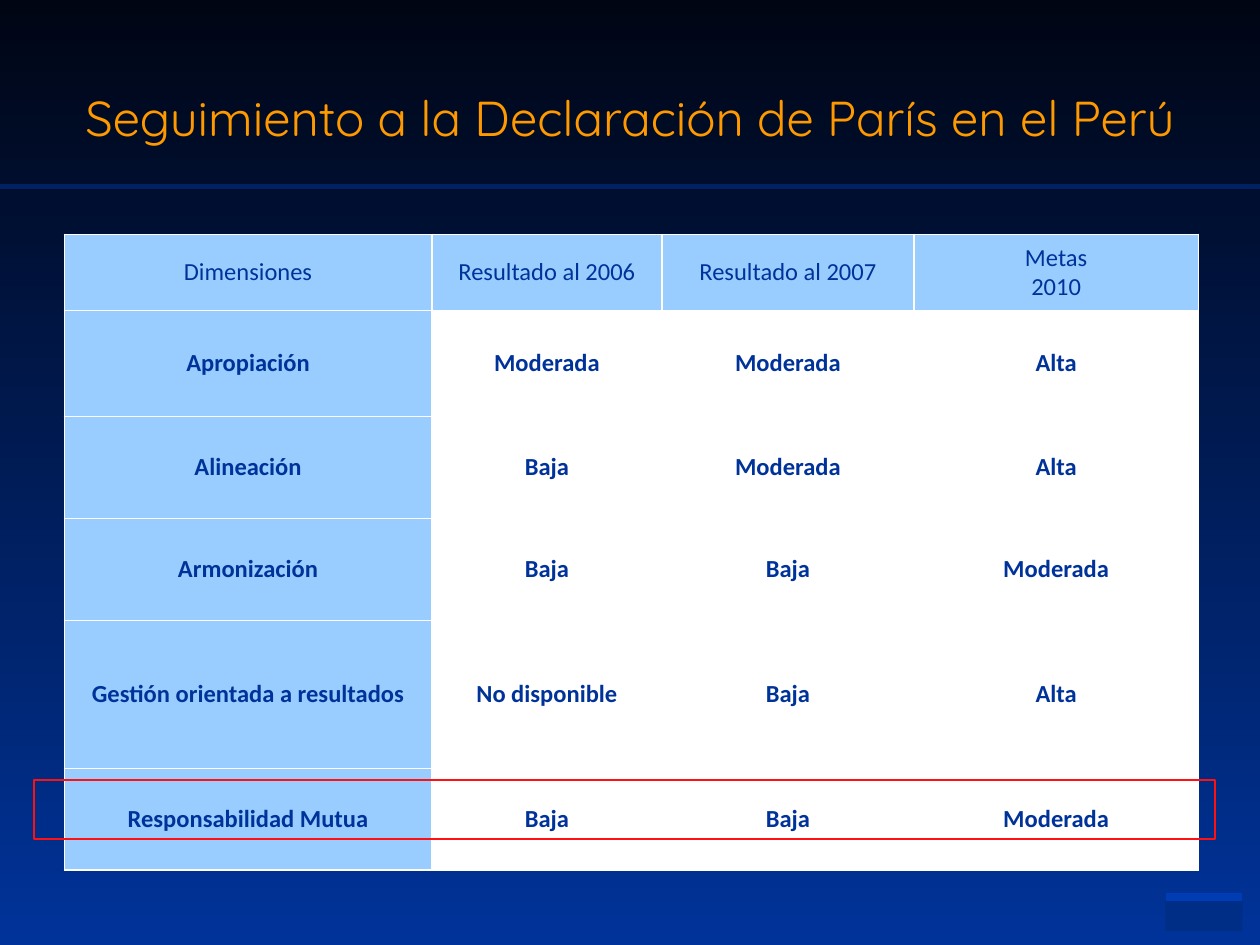
from lxml import etree
from pptx import Presentation
from pptx.dml.color import RGBColor
from pptx.enum.shapes import MSO_CONNECTOR, MSO_SHAPE
from pptx.enum.text import MSO_ANCHOR, PP_ALIGN
from pptx.oxml.ns import qn
from pptx.util import Pt

CENTER = PP_ALIGN.CENTER
MIDDLE = MSO_ANCHOR.MIDDLE
RECT = MSO_SHAPE.RECTANGLE
STRAIGHT = MSO_CONNECTOR.STRAIGHT

NAVY, SKY, WHITE = "003399", "99CCFF", "FFFFFF"
COL_WIDTHS = [210, 131.5, 144, 162.5]
ROW_HEIGHTS = [43.5, 60.5, 58.3, 58.3, 84.5, 58.3]
ROWS = [
    ["Dimensiones", "Resultado al 2006", "Resultado al 2007", "Metas\n2010"],
    ["Apropiación", "Moderada", "Moderada", "Alta"],
    ["Alineación", "Baja", "Moderada", "Alta"],
    ["Armonización", "Baja", "Baja", "Moderada"],
    ["Gestión orientada a resultados", "No disponible", "Baja", "Alta"],
    ["Responsabilidad Mutua", "Baja", "Baja", "Moderada"],
]


def rgb(color):
    return RGBColor.from_string(color)


def set_background(s, top, bottom):
    fill = s.background.fill
    fill.gradient()
    fill.gradient_angle = 270
    for stop, color in zip(fill.gradient_stops, (top, bottom)):
        stop.color.rgb = rgb(color)


def write(tf, text, font, size, color, bold=False):
    for i, line in enumerate(text.split("\n")):
        p = tf.add_paragraph() if i else tf.paragraphs[0]
        p.alignment = CENTER
        r = p.add_run()
        r.text = line
        r.font.name = font
        r.font.size = Pt(size)
        r.font.bold = bold
        r.font.color.rgb = rgb(color)


def add_title(s, text):
    sp = s.shapes.add_textbox(Pt(36), Pt(21.6), Pt(648), Pt(90))
    tf = sp.text_frame
    tf.word_wrap = True
    tf.vertical_anchor = MIDDLE
    write(tf, text, "Quicksand", 28, "FF9900")


def add_rect(s, x, y, w, h, fill=None, line=None):
    sp = s.shapes.add_shape(RECT, Pt(x), Pt(y), Pt(w), Pt(h))
    sp.shadow.inherit = False
    if fill:
        sp.fill.solid()
        sp.fill.fore_color.rgb = rgb(fill)
    else:
        sp.fill.background()
    if line:
        sp.line.color.rgb = rgb(line)
        sp.line.width = Pt(1)
    else:
        sp.line.fill.background()


def add_rule(s, x1, x2, y, color, width):
    c = s.shapes.add_connector(STRAIGHT, Pt(x1), Pt(y), Pt(x2), Pt(y))
    c.line.color.rgb = rgb(color)
    c.line.width = Pt(width)
    etree.SubElement(c._element.spPr, qn("a:effectLst"))


def set_borders(cell, color, width):
    tcPr = cell._tc.get_or_add_tcPr()
    for i, side in enumerate(("lnL", "lnR", "lnT", "lnB")):
        ln = etree.Element(qn(f"a:{side}"), w=str(Pt(width)))
        fill = etree.SubElement(ln, qn("a:solidFill"))
        etree.SubElement(fill, qn("a:srgbClr"), val=color)
        tcPr.insert(i, ln)


def add_results_table(s, x, y):
    frame = s.shapes.add_table(len(ROWS), len(COL_WIDTHS), Pt(x), Pt(y),
                               Pt(sum(COL_WIDTHS)), Pt(sum(ROW_HEIGHTS)))
    table = frame.table
    table.first_row = False
    table.horz_banding = False
    for col, width in zip(table.columns, COL_WIDTHS):
        col.width = Pt(width)
    for i, (row, height) in enumerate(zip(table.rows, ROW_HEIGHTS)):
        row.height = Pt(height)
        for j, cell in enumerate(row.cells):
            cell.vertical_anchor = MIDDLE
            cell.fill.solid()
            cell.fill.fore_color.rgb = rgb(SKY if i == 0 or j == 0 else WHITE)
            set_borders(cell, WHITE, 1)
            write(cell.text_frame, ROWS[i][j], "Calibri", 14, NAVY, bold=i > 0)


def main():
    prs = Presentation()
    prs.slide_width, prs.slide_height = Pt(720), Pt(540)
    s = prs.slides.add_slide(prs.slide_layouts[6])
    set_background(s, "000514", NAVY)
    add_rect(s, 666, 514.8, 44, 17.3, fill="002D86")
    add_rule(s, 0, 720, 106.5, "002162", 3)
    add_rule(s, 666, 710, 512.6, "003CB4", 4.5)
    add_title(s, "Seguimiento a la Declaración de París en el Perú")
    add_results_table(s, 36.8, 134)
    add_rect(s, 19.6, 445.6, 674.8, 34, line="FF1111")
    prs.save("out.pptx")


if __name__ == "__main__":
    main()
